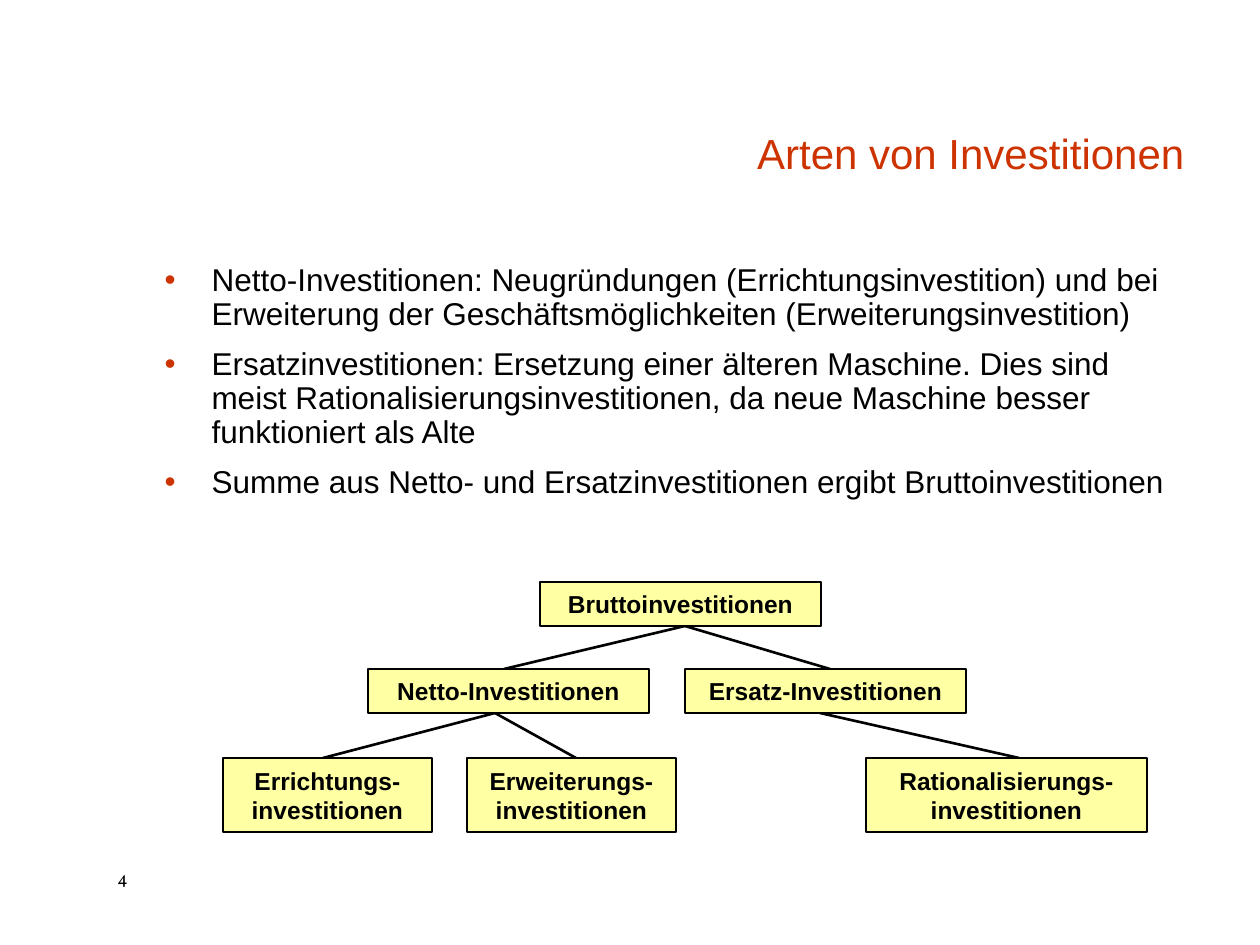
from lxml import etree
from pptx import Presentation
from pptx.dml.color import RGBColor
from pptx.enum.shapes import MSO_CONNECTOR, MSO_SHAPE
from pptx.enum.text import MSO_ANCHOR, MSO_AUTO_SIZE, PP_ALIGN
from pptx.oxml.ns import qn
from pptx.util import Pt

EMU_PER_PX = 914400 / 126
BLACK = RGBColor(0x00, 0x00, 0x00)
RED = RGBColor(0xCC, 0x33, 0x00)
YELLOW = RGBColor(0xFF, 0xFF, 0xA3)
RECTANGLE = MSO_SHAPE.RECTANGLE
STRAIGHT = MSO_CONNECTOR.STRAIGHT
BOTTOM, MIDDLE, TOP = MSO_ANCHOR.BOTTOM, MSO_ANCHOR.MIDDLE, MSO_ANCHOR.TOP
NO_AUTOFIT = MSO_AUTO_SIZE.NONE
CENTER, LEFT, RIGHT = PP_ALIGN.CENTER, PP_ALIGN.LEFT, PP_ALIGN.RIGHT

TITLE = "Arten von Investitionen"
BULLETS = [
    "Netto-Investitionen: Neugründungen (Errichtungsinvestition) und bei "
    "Erweiterung der Geschäftsmöglichkeiten (Erweiterungsinvestition)",
    "Ersatzinvestitionen: Ersetzung einer älteren Maschine. Dies sind meist "
    "Rationalisierungsinvestitionen, da neue Maschine besser funktioniert als Alte",
    "Summe aus Netto- und Ersatzinvestitionen ergibt Bruttoinvestitionen",
]
PAGE_NUMBER = "4"

# Tree levels: top and height in px, then (lines of text, left, width) per box
LEVELS = [
    (582, 44, [(["Bruttoinvestitionen"], 540, 281)]),
    (669, 44, [(["Netto-Investitionen"], 368, 281),
               (["Ersatz-Investitionen"], 685, 281)]),
    (758, 74, [(["Errichtungs-", "investitionen"], 223, 209),
               (["Erweiterungs-investitionen"], 467, 209),
               (["Rationalisierungs-investitionen"], 866, 281)]),
]
# Upper level, x on its lower edge, x positions on the next level's upper edge
BRANCHES = [(0, 685, [830, 504]), (1, 495, [323, 576]), (1, 820, [1019])]


def px(*lengths):
    return [round(length * EMU_PER_PX) for length in lengths]


def place(shape, *bounds):
    shape.left, shape.top, shape.width, shape.height = px(*bounds)


def prepare_frame(shape, anchor):
    frame = shape.text_frame
    frame.word_wrap = True
    frame.auto_size = NO_AUTOFIT
    frame.vertical_anchor = anchor
    return frame


def add_run(paragraph, text, size, color=BLACK, bold=False, name="Arial"):
    run = paragraph.add_run()
    run.text = text
    font = run.font
    font.name, font.size, font.bold = name, Pt(size), bold
    font.color.rgb = color


def add_bullet(paragraph, color, indent):
    properties = paragraph._p.get_or_add_pPr()
    properties.set("marL", str(indent))
    properties.set("indent", str(-indent))
    bullet_color = etree.SubElement(properties, qn("a:buClr"))
    etree.SubElement(bullet_color, qn("a:srgbClr"), val=str(color))
    etree.SubElement(properties, qn("a:buFont"), typeface="Arial")
    etree.SubElement(properties, qn("a:buChar"), char="•")


def add_title(slide):
    title = slide.shapes.title
    place(title, 263, 53, 934, 132)
    paragraph = prepare_frame(title, BOTTOM).paragraphs[0]
    paragraph.alignment = RIGHT
    paragraph.line_spacing = 0.9
    add_run(paragraph, TITLE, 24, RED)


def add_body(slide):
    body = slide.placeholders[1]
    place(body, 152, 258, 1045, 289)
    frame = prepare_frame(body, TOP)
    for index, text in enumerate(BULLETS):
        paragraph = frame.add_paragraph() if index else frame.paragraphs[0]
        add_bullet(paragraph, RED, px(47)[0])
        paragraph.alignment = LEFT
        paragraph.line_spacing = 0.9
        paragraph.space_before = Pt(9 if index else 0)
        add_run(paragraph, text, 18)


def add_branch(shapes, *ends):
    connector = shapes.add_connector(STRAIGHT, *px(*ends))
    connector.line.color.rgb = BLACK
    connector.line.width = Pt(1.5)
    etree.SubElement(connector._element.spPr, qn("a:effectLst"))


def add_box(shapes, lines, *bounds):
    box = shapes.add_shape(RECTANGLE, *px(*bounds))
    box.shadow.inherit = False
    box.fill.solid()
    box.fill.fore_color.rgb = YELLOW
    box.line.color.rgb = BLACK
    box.line.width = Pt(1.5)
    paragraph = prepare_frame(box, MIDDLE).paragraphs[0]
    paragraph.alignment = CENTER
    for index, text in enumerate(lines):
        if index:
            paragraph.add_line_break()
        add_run(paragraph, text, 14, bold=True)


def add_tree(slide):
    shapes = slide.shapes.add_group_shape().shapes
    for level, start_x, end_xs in BRANCHES:
        top, height, _ = LEVELS[level]
        for end_x in end_xs:
            add_branch(shapes, start_x, top + height, end_x, LEVELS[level + 1][0])
    for top, height, boxes in LEVELS:
        for lines, left, width in boxes:
            add_box(shapes, lines, left, top, width, height)


def add_page_number(slide):
    box = slide.shapes.add_textbox(*px(105, 861, 84, 34))
    paragraph = prepare_frame(box, TOP).paragraphs[0]
    add_run(paragraph, PAGE_NUMBER, 10, name="Vollkorn")


def main():
    presentation = Presentation()
    presentation.slide_width, presentation.slide_height = px(1260, 945)
    slide = presentation.slides.add_slide(presentation.slide_layouts[1])
    add_page_number(slide)
    add_title(slide)
    add_body(slide)
    add_tree(slide)
    presentation.save("out.pptx")


if __name__ == "__main__":
    main()
